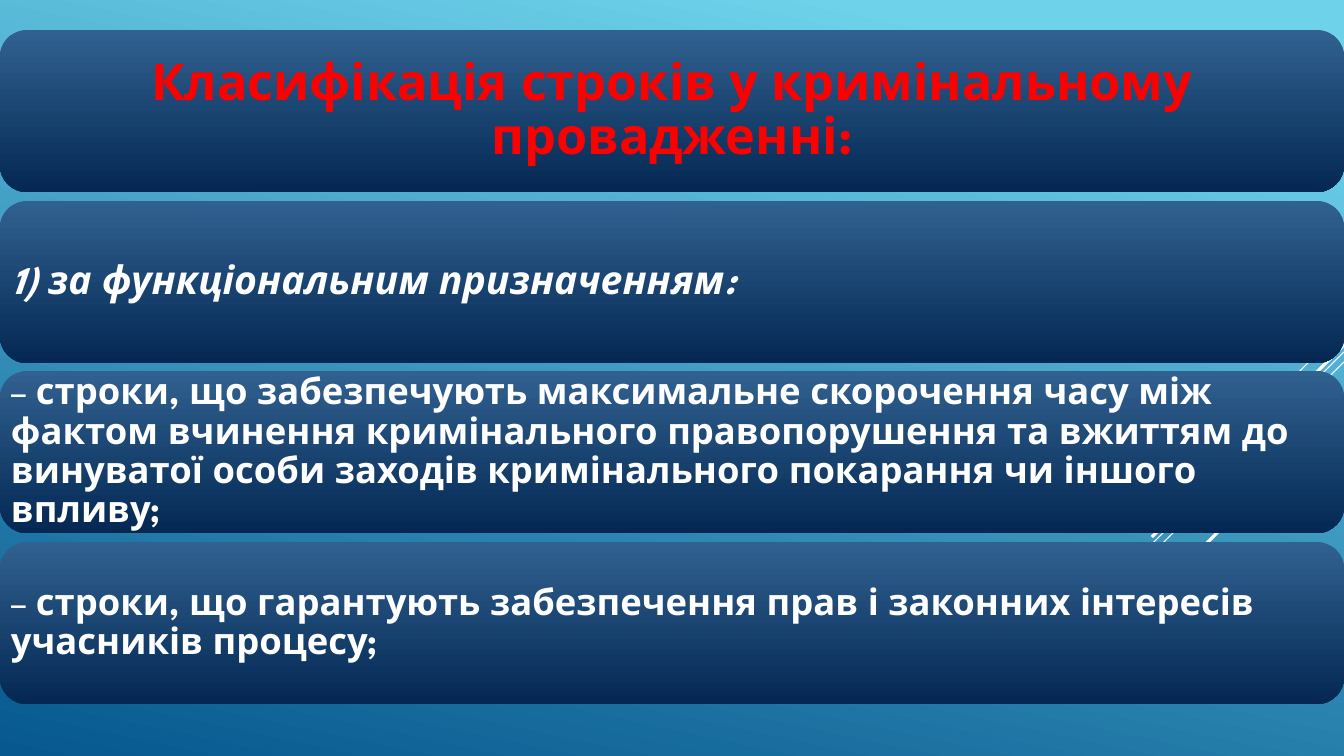
from lxml.etree import SubElement
from pptx import Presentation
from pptx.dml.color import RGBColor
from pptx.enum.shapes import MSO_CONNECTOR as Connector, MSO_SHAPE as Shape
from pptx.enum.text import MSO_ANCHOR as Anchor, MSO_AUTO_SIZE as AutoSize, PP_ALIGN as Align
from pptx.oxml.ns import qn
from pptx.util import Emu, Pt

WHITE = RGBColor(0xFF, 0xFF, 0xFF)
RED = RGBColor(0xFF, 0x00, 0x00)
SKY = RGBColor(0x6E, 0xD2, 0xEB)
OCEAN = RGBColor(0x06, 0x58, 0x8E)
STEEL = RGBColor(0x31, 0x61, 0x90)
NAVY = RGBColor(0x04, 0x28, 0x53)

WIDTH, HEIGHT = 1344, 756
PANEL_TOP, PANEL_HEIGHT, PANEL_SPAN = 30, 162, 512  # span: first top to last top
COMPARISON_LAYOUT = 4


def px(count):
    return Emu(round(count * 914400 / 100.8))


def add_span(para, text, font="League Spartan", size=26, color=WHITE, bold=False, italic=False):
    span = para.add_run()
    span.text = text
    span.font.name, span.font.size = font, Pt(size)
    span.font.bold, span.font.italic = bold, italic
    span.font.color.rgb = color


class Page:
    def __init__(self, deck):
        self.slide = deck.slides.add_slide(deck.slide_layouts[COMPARISON_LAYOUT])
        self.shapes = self.slide.shapes
        self.slots = list(self.slide.placeholders)

    def gradient(self, fill, first, last, angle, start=0):
        fill.gradient()
        fill.gradient_angle = 360 - angle
        for stop, color, position in zip(fill.gradient_stops, (first, last), (start, 1)):
            stop.color.rgb = color
            stop.position = position

    def ray(self, top, length, weight):
        """Diagonal line from the right edge down to the left."""
        line = self.shapes.add_connector(
            Connector.STRAIGHT, px(WIDTH), px(top), px(WIDTH - length), px(top + length))
        line.line.color.rgb = WHITE
        line.line.width = Pt(weight)
        SubElement(line._element.spPr, qn("a:effectLst"))

    def panel(self, top):
        box = self.shapes.add_shape(Shape.ROUNDED_RECTANGLE, 0, px(top), px(WIDTH), px(PANEL_HEIGHT))
        box.shadow.inherit = False
        box.line.fill.background()
        self.gradient(box.fill, STEEL, NAVY, 90)

    def text(self, slot, top, spans, inset, align):
        """Place a placeholder over its panel and fill in its one paragraph."""
        self.shapes._spTree.append(slot._element)  # bring in front of the panel
        slot.left, slot.top, slot.width, slot.height = 0, px(top), px(WIDTH), px(PANEL_HEIGHT)
        frame = slot.text_frame
        frame.word_wrap, frame.auto_size = True, AutoSize.NONE
        frame.vertical_anchor = Anchor.MIDDLE
        frame.margin_left = frame.margin_right = px(inset)
        frame.margin_top = frame.margin_bottom = px(inset)
        para = frame.paragraphs[0]
        para.alignment, para.line_spacing = align, 0.9
        para.space_before = Pt(0)
        properties = para._p.get_or_add_pPr()
        properties.set("marL", "0")
        properties.set("indent", "0")
        SubElement(properties, qn("a:buNone"))
        for words, style in spans:
            add_span(para, words, **style)

    def drop_empty_slots(self):
        for slot in self.slots:
            if not slot.text_frame.text:
                slot._element.getparent().remove(slot._element)


# Top, length and weight of each ray
RAYS = [(327, 101, 0.75), (352, 329, 0.75), (362, 209, 0.75), (345, 192, 2.25), (406, 140, 2.25)]

# Spans, inset and alignment of each panel
PANELS = [
    ([("Класифікація строків у кримінальному провадженні:",
       dict(size=36, color=RED, bold=True))], 15, Align.CENTER),
    ([("1) за функціональним призначенням:",
       dict(size=28, bold=True, italic=True))], 12, Align.LEFT),
    ([("– ", {}),
      ("строки, що забезпечують максимальне скорочення часу між фактом вчинення "
       "кримінального правопорушення та вжиттям до винуватої особи заходів "
       "кримінального покарання чи іншого впливу;", dict(bold=True))], 11, Align.LEFT),
    ([("– ", {}),
      ("строки, що гарантують забезпечення прав і законних інтересів учасників процесу;",
       dict(bold=True))], 11, Align.LEFT),
]


def main():
    deck = Presentation()
    deck.slide_width, deck.slide_height = px(WIDTH), px(HEIGHT)
    page = Page(deck)

    # Background and rays
    page.gradient(page.slide.background.fill, SKY, OCEAN, 102, start=0.1)
    for ray in RAYS:
        page.ray(*ray)

    # Title and list panels
    for index, (slot, (spans, inset, align)) in enumerate(zip(page.slots, PANELS)):
        top = PANEL_TOP + round(index * PANEL_SPAN / (len(PANELS) - 1))
        page.panel(top)
        page.text(slot, top, spans, inset, align)
    page.drop_empty_slots()

    deck.save("out.pptx")


if __name__ == "__main__":
    main()
